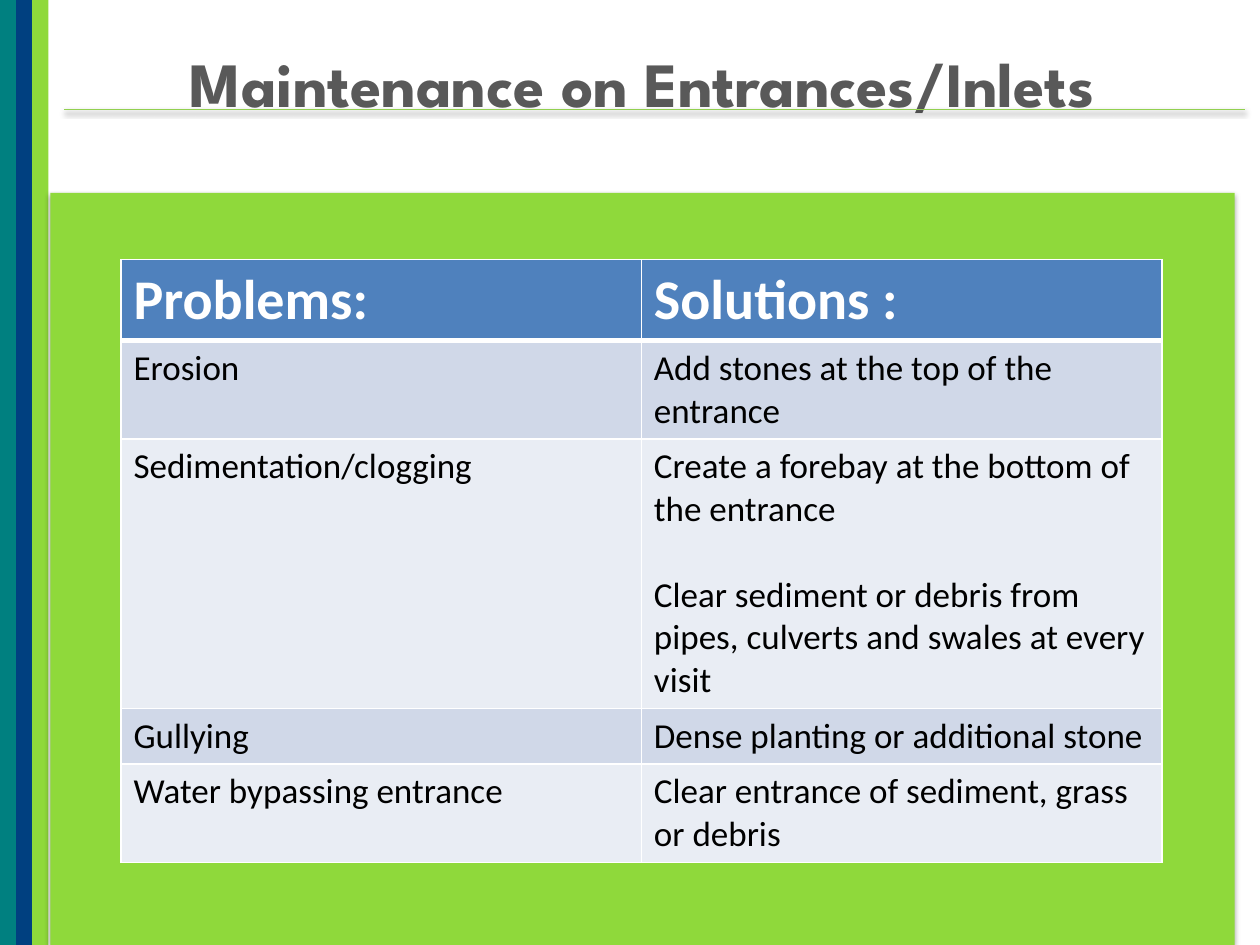
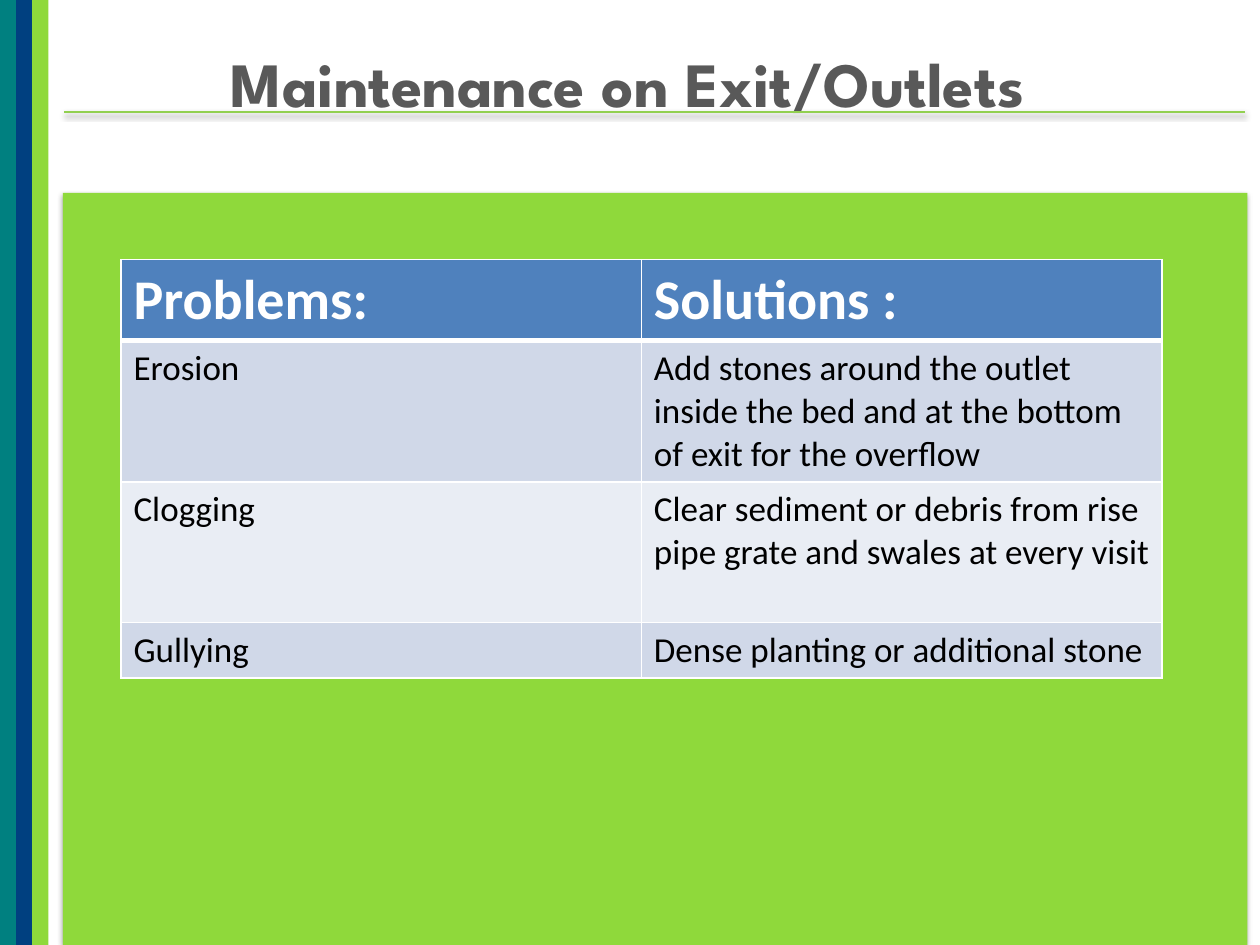
from pptx import Presentation
from pptx.dml.color import RGBColor
from pptx.enum.shapes import MSO_CONNECTOR, MSO_SHAPE
from pptx.enum.text import MSO_ANCHOR, MSO_AUTO_SIZE, PP_ALIGN
from pptx.oxml import parse_xml
from pptx.oxml.ns import nsdecls
from pptx.util import Pt

COLORS = {name: RGBColor.from_string(code) for name, code in {
    "teal": "008080", "navy": "004080", "lime": "8FD93B", "rule": "92D050",
    "title": "595959", "header": "4F81BD", "odd row": "D0D8E8",
    "even row": "E9EDF4", "white": "FFFFFF", "black": "000000",
}.items()}
TITLE_FONT, TABLE_FONT = "League Spartan", "Calibri"
BAND_WIDTH = 9.2
LINE_HEIGHT, CELL_PADDING = 24.4, 7.2

# Each row: problem, paragraphs of the solution, lines of text it takes
GULLYING = ("Gullying", ["Dense planting or additional stone"], 1)
SLIDES = [
    {
        "title": "Maintenance on Entrances/Inlets",
        "title indent": 17, "panel left": 28.8, "rule top": 62.6,
        "rows": [
            ("Erosion", ["Add stones at the top of the entrance"], 2),
            ("Sedimentation/clogging",
             ["Create a forebay at the bottom of the entrance",
              "Clear sediment or debris from pipes, culverts and swales at every visit"], 6),
            GULLYING,
            ("Water bypassing entrance", ["Clear entrance of sediment, grass or debris"], 2),
        ],
    },
    {
        "title": "Maintenance on Exit/Outlets",
        "title indent": 0, "panel left": 36, "rule top": 64.1,
        "rows": [
            ("Erosion", ["Add stones around the outlet inside the bed and at the "
                         "bottom of exit for the overflow"], 3),
            ("Clogging", ["Clear sediment or debris from rise pipe grate and swales "
                          "at every visit"], 3),
            GULLYING,
        ],
    },
]


def add_shadow(shape, blur, distance, opacity):
    """Give a shape or connector a black shadow straight below it."""
    shape._element.spPr.append(parse_xml(
        f'<a:effectLst {nsdecls("a")}><a:outerShdw blurRad="{Pt(blur)}" '
        f'dist="{Pt(distance)}" dir="5400000" rotWithShape="0"><a:srgbClr val="000000">'
        f'<a:alpha val="{opacity * 1000}"/></a:srgbClr></a:outerShdw></a:effectLst>'))


def fill_cell(cell, paragraphs, fill, size, color, bold, edges):
    """Write a cell; edges maps the border sides L, R, T, B to widths in points."""
    cell.text_frame.text = "\n".join(paragraphs)
    for index, paragraph in enumerate(cell.text_frame.paragraphs):
        if index:
            paragraph.space_before = Pt(LINE_HEIGHT)
        font = paragraph.runs[0].font
        font.name, font.size, font.bold = TABLE_FONT, Pt(size), bold
        font.color.rgb = COLORS[color]
    for side, width in edges.items():
        cell._tc.get_or_add_tcPr().append(parse_xml(
            f'<a:ln{side} {nsdecls("a")} w="{Pt(width)}"><a:solidFill>'
            f'<a:srgbClr val="{COLORS["white"]}"/></a:solidFill></a:ln{side}>'))
    cell.fill.solid()
    cell.fill.fore_color.rgb = COLORS[fill]


prs = Presentation()
prs.slide_width, prs.slide_height = Pt(720), Pt(540)

for content in SLIDES:
    slide = prs.slides.add_slide(prs.slide_layouts[5])

    title = slide.shapes.title
    title.left, title.top, title.width, title.height = Pt(13), Pt(14.4), Pt(691.2), Pt(90.7)
    heading = title.text_frame
    heading.text = content["title"]
    heading.auto_size = MSO_AUTO_SIZE.NONE
    heading.vertical_anchor = MSO_ANCHOR.TOP
    heading.margin_top = Pt(10.8)
    heading.margin_left = Pt(7.2 + content["title indent"])
    heading.paragraphs[0].alignment = PP_ALIGN.CENTER
    font = heading.paragraphs[0].runs[0].font
    font.name, font.size, font.bold = TITLE_FONT, Pt(36), True
    font.color.rgb = COLORS["title"]

    blocks = [(i * BAND_WIDTH, 0, BAND_WIDTH, 540, color)
              for i, color in enumerate(["teal", "navy", "lime"])]
    blocks.append((content["panel left"], 110.2, 676.8, 429.8, "lime"))
    for left, top, width, height, color in blocks:
        block = slide.shapes.add_shape(
            MSO_SHAPE.RECTANGLE, Pt(left), Pt(top), Pt(width), Pt(height))
        block.fill.solid()
        block.fill.fore_color.rgb = COLORS[color]
        block.line.fill.background()
        if top:
            add_shadow(block, 3.1, 1.8, 35)
        else:
            block.shadow.inherit = False

    rows = content["rows"]
    heights = [46.2] + [CELL_PADDING + lines * LINE_HEIGHT for *_, lines in rows]
    table = slide.shapes.add_table(
        len(heights), 2, Pt(69.1), Pt(148.3), Pt(594.8), Pt(sum(heights))).table
    for row, height in zip(table.rows, heights):
        row.height = Pt(height)
    for column, label in enumerate(["Problems:", "Solutions :"]):
        fill_cell(table.cell(0, column), [label], "header", 32, "white", True,
                  {"L": 1, "R": 1, "T": 1, "B": 3})
    for number, (problem, solution, _) in enumerate(rows, start=1):
        fill = "odd row" if number % 2 else "even row"
        edges = {"L": 1, "R": 1, "T": 3 if number == 1 else 1, "B": 1}
        for column, paragraphs in enumerate([[problem], solution]):
            fill_cell(table.cell(number, column), paragraphs, fill, 20, "black", False, edges)

    rule_top = Pt(content["rule top"])
    rule = slide.shapes.add_connector(
        MSO_CONNECTOR.STRAIGHT, Pt(36.7), rule_top, Pt(711.4), rule_top)
    rule.line.color.rgb = COLORS["rule"]
    rule.line.width = Pt(1)
    add_shadow(rule, 3.1, 1.6, 38)

prs.save("out.pptx")
